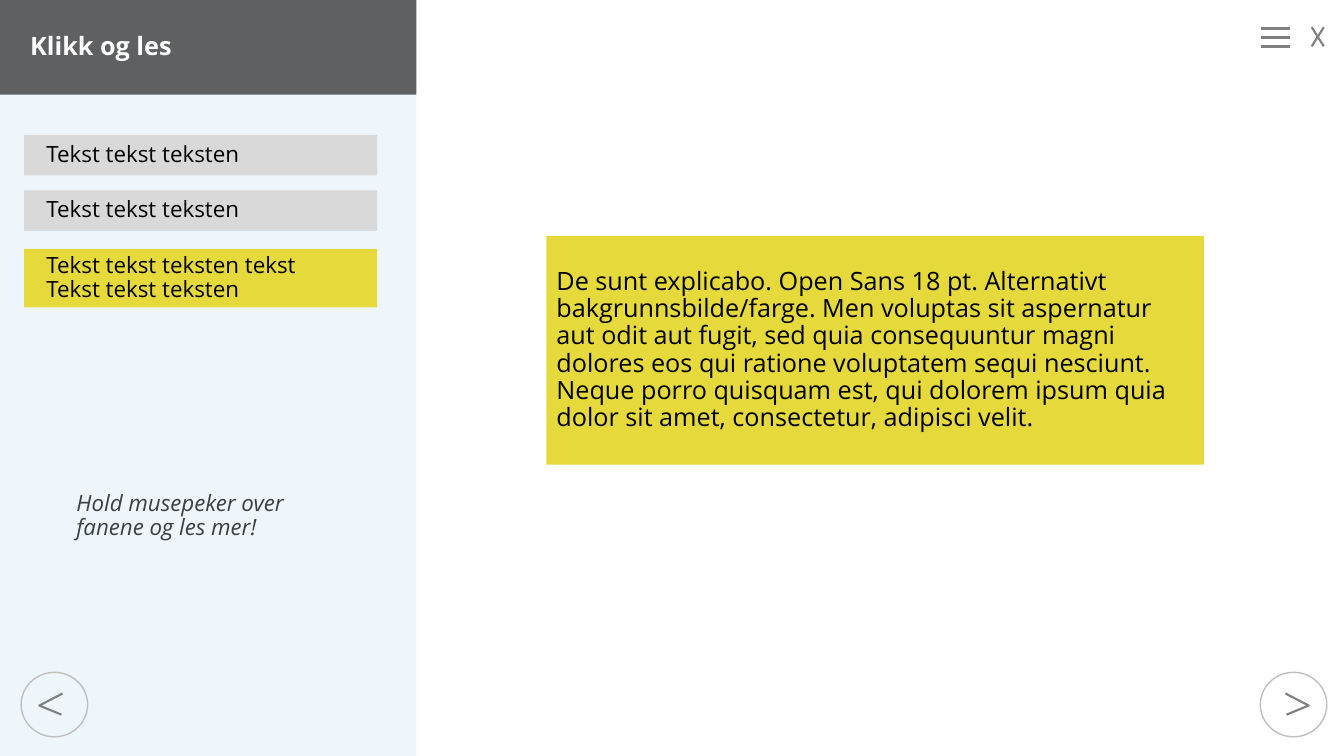
from pptx import Presentation
from pptx.dml.color import RGBColor
from pptx.enum.shapes import MSO_CONNECTOR as Connector, MSO_SHAPE as Shape
from pptx.enum.text import MSO_ANCHOR as Anchor, MSO_AUTO_SIZE as AutoSize, PP_ALIGN as Align
from pptx.oxml.ns import qn
from pptx.util import Inches, Pt
from lxml.etree import SubElement

COLORS = {
    "panel": "EEF6FB", "header": "5E6062", "tab": "D9D9D9", "active": "E5D93B",
    "icon": "808080", "ring": "BFBFBF", "text": "000000", "hint": "3F4042", "white": "FFFFFF",
}
MIRROR_SUM = 13.37


def rgb(name):
    return RGBColor.from_string(COLORS[name])


def write(frame, text, size=16, color="text", bold=False, italic=False,
          anchor=Anchor.MIDDLE, left=0.1, font="Open Sans"):
    frame.word_wrap = True
    frame.auto_size = AutoSize.NONE
    frame.vertical_anchor = anchor
    frame.margin_left, frame.margin_right = Inches(left), Inches(0.1)
    frame.margin_top = frame.margin_bottom = Inches(0.05)
    frame.text = text
    for para in frame.paragraphs:
        para.alignment = Align.LEFT
        para.line_spacing = 0.9
        para.space_before = Pt(0)
        for span in para.runs:
            span.font.name, span.font.size = font, Pt(size)
            span.font.bold, span.font.italic = bold, italic
            span.font.color.rgb = rgb(color)


class SlideBuilder:
    """Holds the style and the current slide, and adds its elements."""

    def __init__(self, page):
        self.page = page
        self.shapes = page.shapes

    def paint(self, shape, fill=None, line=None, width=1):
        if fill:
            shape.fill.solid()
            shape.fill.fore_color.rgb = rgb(fill)
        else:
            shape.fill.background()
        if line:
            shape.line.color.rgb = rgb(line)
            shape.line.width = Pt(width)
        else:
            shape.line.fill.background()

    def box(self, x, y, width, height, kind=Shape.RECTANGLE, text=None, fill=None, line=None, **style):
        box = self.shapes.add_shape(kind, Inches(x), Inches(y), Inches(width), Inches(height))
        box.shadow.inherit = False
        self.paint(box, fill, line)
        if text:
            write(box.text_frame, text, **style)
        return box

    def title(self, x, y, width, height, text, fill, behind, **style):
        title = self.shapes.title
        title.left, title.top = Inches(x), Inches(y)
        title.width, title.height = Inches(width), Inches(height)
        self.paint(title, fill)
        write(title.text_frame, text, **style)
        behind.element.addnext(title.element)

    def label(self, x, y, width, height, text, **style):
        label = self.shapes.add_textbox(Inches(x), Inches(y), Inches(width), Inches(height))
        write(label.text_frame, text, **style)

    def line(self, x1, y1, x2, y2, width):
        line = self.shapes.add_connector(
            Connector.STRAIGHT, Inches(x1), Inches(y1), Inches(x2), Inches(y2))
        line.line.color.rgb = rgb("icon")
        line.line.width = Pt(width)
        SubElement(line.element.spPr, qn("a:effectLst"))

    def arrow_button(self, forward):
        ring_x = 12.5 if forward else MIRROR_SUM - 12.5 - 0.66
        self.box(ring_x, 6.67, 0.66, 0.64, kind=Shape.OVAL, line="ring")
        points = [(Inches(x if forward else MIRROR_SUM - x), Inches(y))
                  for x, y in ((12.75, 6.88), (12.98, 7), (12.76, 7.09))]
        outline = self.shapes.build_freeform(*points[0])
        outline.add_line_segments(points[1:], close=False)
        chevron = outline.convert_to_shape()
        chevron.shadow.inherit = False
        self.paint(chevron, line="icon", width=1.5)


def main():
    deck = Presentation()
    deck.slide_width, deck.slide_height = Inches(13.33), Inches(7.5)
    slide = SlideBuilder(deck.slides.add_slide(deck.slide_layouts[5]))

    slide.line(13.01, 0.27, 13.13, 0.46, 1.5)
    slide.line(13.13, 0.27, 13.01, 0.46, 1.5)
    for y in (0.28, 0.37, 0.46):
        slide.line(12.51, y, 12.79, y, 2.25)

    panel = slide.box(0, 0, 4.13, 7.5, fill="panel")
    slide.title(0, -0.01, 4.13, 0.95, "Klikk og les", "header", panel,
                size=18, color="white", bold=True, left=0.3)

    tab_text = "Tekst tekst teksten"
    for y, height, text, fill in (
        (1.34, 0.4, tab_text, "tab"),
        (1.89, 0.4, tab_text, "tab"),
        (2.47, 0.58, f"{tab_text} tekst\n{tab_text}", "active"),
    ):
        slide.box(0.24, y, 3.5, height, text=text, fill=fill, left=0.22)

    slide.label(0.66, 4.83, 2.89, 0.64, "Hold musepeker over fanene og les mer!",
                color="hint", italic=True, anchor=Anchor.TOP)
    slide.box(5.42, 2.34, 6.52, 2.27, fill="active", size=18, text=(
        "De sunt explicabo. Open Sans 18 pt. Alternativt bakgrunnsbilde/farge. "
        "Men voluptas sit aspernatur aut odit aut fugit, sed quia consequuntur magni "
        "dolores eos qui ratione voluptatem sequi nesciunt. Neque porro quisquam est, "
        "qui dolorem ipsum quia dolor sit amet, consectetur, adipisci velit."))

    for forward in (False, True):
        slide.arrow_button(forward)
    deck.save("out.pptx")


if __name__ == "__main__":
    main()
